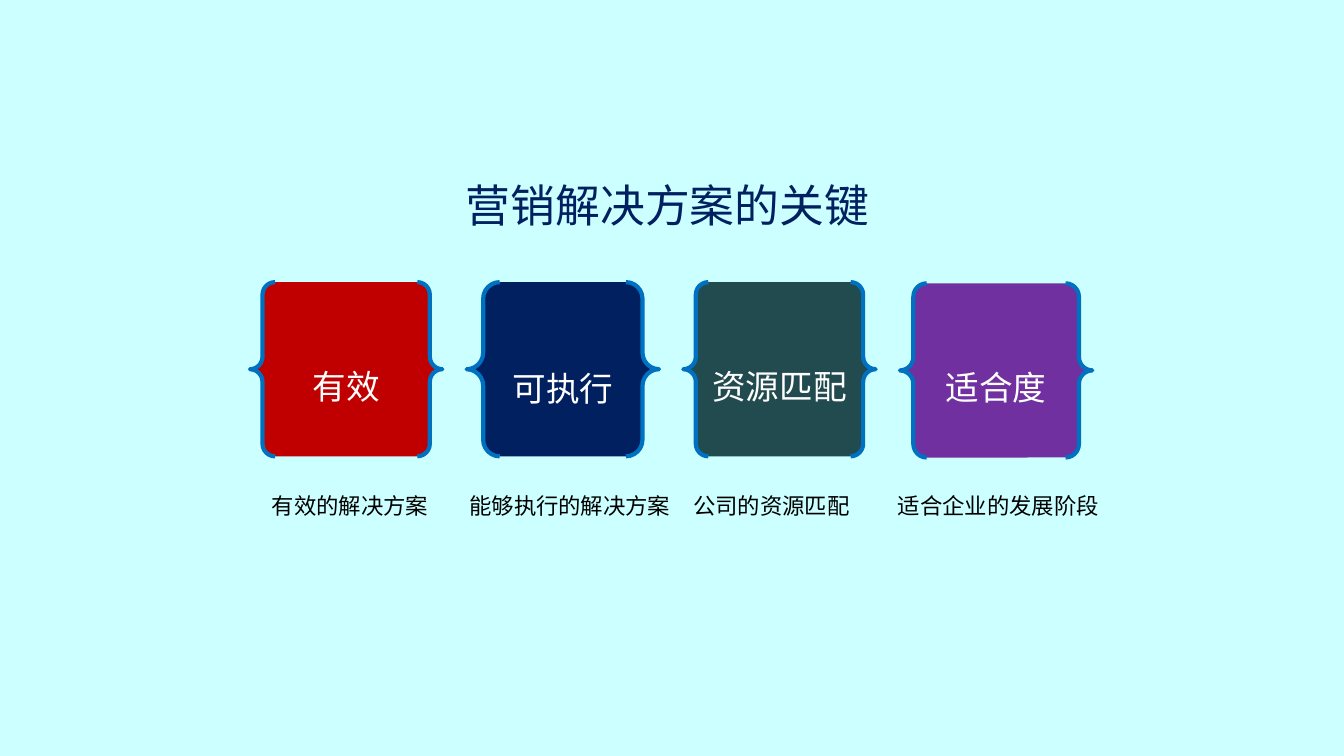
from pptx import Presentation
from pptx.dml.color import RGBColor
from pptx.enum import shapes, text
from pptx.oxml import ns
from pptx.util import Cm, Pt
from lxml import etree

FONT = "Noto Sans CJK SC"
CARD_LEFT, CARD_PITCH = 6.3, 5.46
CARD_WIDTH, CARD_HEIGHT = 4.85, 4.39
CAPTION_TOP, CAPTION_HEIGHT = 12.27, 0.94

# keyword, fill, brace curve, card top, caption, caption left, caption width
KEYS = [
    ("有效", "C00000", 0.072, 7.11, "有效的解决方案", 6.6, 4.5),
    ("可执行", "002060", 0.095, 7.11, "能够执行的解决方案", 11.58, 5.64),
    ("资源匹配", "224B50", 0.072, 7.11, "公司的资源匹配", 17.22, 4.5),
    ("适合度", "7030A0", 0.077, 7.14, "适合企业的发展阶段", 22.38, 5.64),
]


def paint(color_format, value):
    color_format.rgb = RGBColor.from_string(value)


def fill_solid(fill, value):
    fill.solid()
    paint(fill.fore_color, value)


def write_text(shape, words, size, color, align=text.PP_ALIGN.LEFT,
               anchor=text.MSO_ANCHOR.TOP, spacing=1.0, wrap=True):
    frame = shape.text_frame
    frame.word_wrap = wrap
    frame.vertical_anchor = anchor
    paragraph = frame.paragraphs[0]
    paragraph.alignment = align
    paragraph.line_spacing = spacing
    run = paragraph.add_run()
    run.text = words
    run.font.size = Pt(size)
    run.font.name = FONT
    paint(run.font.color, color)
    # Chinese characters take the East Asian font
    latin = run.font._element.find(ns.qn("a:latin"))
    east_asian = etree.Element(ns.qn("a:ea"), typeface=FONT)
    latin.addnext(east_asian)


def add_title(slide, words):
    title = slide.shapes.title
    title.left, title.top = Cm(1.75), Cm(3.81)
    title.width, title.height = Cm(30.15), Cm(2.67)
    write_text(title, words, 32, "002060", align=text.PP_ALIGN.CENTER,
               anchor=text.MSO_ANCHOR.MIDDLE)


def add_card(slide, left, top, words, color, curve):
    card = slide.shapes.add_shape(
        shapes.MSO_SHAPE.DOUBLE_BRACE,
        Cm(left), Cm(top), Cm(CARD_WIDTH), Cm(CARD_HEIGHT))
    card.shadow.inherit = False
    card.adjustments[0] = curve
    fill_solid(card.fill, color)
    paint(card.line.color, "0070C0")
    card.line.width = Pt(3)
    write_text(card, words, 24, "FFFFFF", align=text.PP_ALIGN.CENTER,
               anchor=text.MSO_ANCHOR.MIDDLE, spacing=1.5)


def add_caption(slide, left, width, words):
    caption = slide.shapes.add_textbox(
        Cm(left), Cm(CAPTION_TOP), Cm(width), Cm(CAPTION_HEIGHT))
    write_text(caption, words, 16, "000000", wrap=False)
    caption.text_frame.auto_size = text.MSO_AUTO_SIZE.SHAPE_TO_FIT_TEXT


def main():
    presentation = Presentation()
    presentation.slide_width, presentation.slide_height = Cm(33.87), Cm(19.05)
    title_only = presentation.slide_layouts.get_by_name("Title Only")
    slide = presentation.slides.add_slide(title_only)
    fill_solid(slide.background.fill, "CCFFFF")

    add_title(slide, "营销解决方案的关键")

    # Four keys, each a brace card with a caption below
    for index, key in enumerate(KEYS):
        word, color, curve, top, caption, caption_left, caption_width = key
        add_card(slide, CARD_LEFT + index * CARD_PITCH, top, word, color, curve)
        add_caption(slide, caption_left, caption_width, caption)

    presentation.save("out.pptx")


if __name__ == "__main__":
    main()
